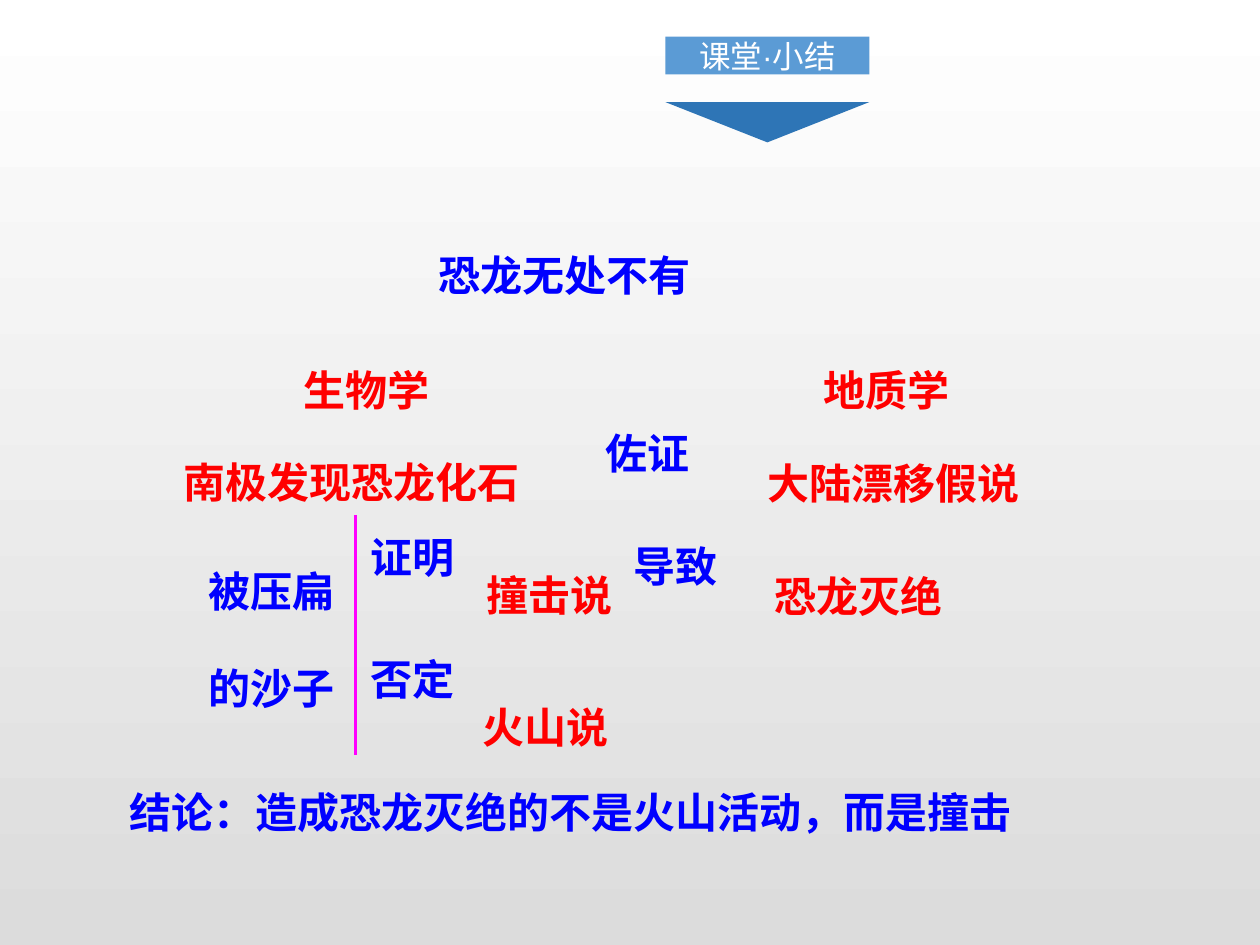
from dataclasses import dataclass

from lxml import etree
from pptx import Presentation
from pptx import util as u
from pptx.dml.color import RGBColor
from pptx.enum import shapes, text
from pptx.oxml.ns import qn


@dataclass(frozen=True)
class Theme:
    sky: str = "FFFFFF"
    ground: str = "DCDCDC"
    link: str = "0000FF"
    key: str = "FF0000"
    divider: str = "FF00FF"
    banner: str = "5B9BD5"
    pointer: str = "2E75B6"
    banner_text: str = "FFFFFF"
    body_font: str = "Times New Roman"
    banner_font: str = "Arial"
    body_size: int = 24
    banner_size: int = 18


def rgb(value):
    return RGBColor.from_string(value)


def write(frame, content, *, font, size, color, bold=False, align=None,
          line_spacing=None, before=None):
    """Put each line of content in its own formatted paragraph."""
    for index, line in enumerate(content.split("\n")):
        paragraph = frame.paragraphs[0] if index == 0 else frame.add_paragraph()
        paragraph.alignment = align
        paragraph.line_spacing = line_spacing
        paragraph.space_before = before
        run = paragraph.add_run()
        run.text = line
        run.font.name = font
        run.font.size = u.Pt(size)
        run.font.bold = bold
        run.font.color.rgb = rgb(color)


class SummarySlide:
    def __init__(self, deck, theme):
        self.theme = theme
        self.slide = deck.slides.add_slide(deck.slide_layouts[5])

    def background(self):
        fill = self.slide.background.fill
        fill.gradient()
        fill.gradient_angle = 270
        for stop, color in zip(fill.gradient_stops,
                               (self.theme.sky, self.theme.ground)):
            stop.color.rgb = rgb(color)

    def banner(self, content, left, top, width, height):
        heading = self.slide.shapes.title
        heading.left, heading.top = u.Inches(left), u.Inches(top)
        heading.width, heading.height = u.Inches(width), u.Inches(height)
        heading.fill.solid()
        heading.fill.fore_color.rgb = rgb(self.theme.banner)
        frame = heading.text_frame
        frame.margin_left = frame.margin_right = 0
        frame.margin_top = frame.margin_bottom = 0
        frame.vertical_anchor = text.MSO_ANCHOR.MIDDLE
        frame.auto_size = text.MSO_AUTO_SIZE.NONE
        write(frame, content, font=self.theme.banner_font,
              size=self.theme.banner_size, color=self.theme.banner_text,
              align=text.PP_ALIGN.CENTER)

    def pointer(self, left, top, width, height):
        triangle = self.slide.shapes.add_shape(
            shapes.MSO_SHAPE.ISOSCELES_TRIANGLE, u.Inches(left),
            u.Inches(top), u.Inches(width), u.Inches(height))
        triangle.rotation = 180
        triangle.shadow.inherit = False
        triangle.fill.solid()
        triangle.fill.fore_color.rgb = rgb(self.theme.pointer)
        triangle.line.fill.background()

    def label(self, content, left, top, width, color, height=0.71, wrap=True):
        box = self.slide.shapes.add_textbox(
            u.Inches(left), u.Inches(top), u.Inches(width), u.Inches(height))
        frame = box.text_frame
        frame.word_wrap = wrap
        frame.auto_size = text.MSO_AUTO_SIZE.SHAPE_TO_FIT_TEXT
        write(frame, content, font=self.theme.body_font,
              size=self.theme.body_size, color=color, bold=True,
              line_spacing=1.5, before=u.Pt(self.theme.body_size / 2))

    def divider(self, x, top, bottom):
        rule = self.slide.shapes.add_connector(
            shapes.MSO_CONNECTOR.STRAIGHT, u.Inches(x), u.Inches(top),
            u.Inches(x), u.Inches(bottom))
        rule.line.color.rgb = rgb(self.theme.divider)
        rule.line.width = u.Pt(1.5)
        etree.SubElement(rule._element.spPr, qn("a:effectLst"))


def main():
    deck = Presentation()
    deck.slide_width, deck.slide_height = u.Inches(10), u.Inches(7.5)
    theme = Theme()
    summary = SummarySlide(deck, theme)
    summary.background()

    # Heading with its downward pointer
    summary.banner("课堂·小结", 5.28, 0.29, 1.62, 0.3)
    summary.pointer(5.28, 0.81, 1.62, 0.32)

    # Key terms of both lines of evidence
    key_terms = [
        ("生物学", 2.31, 2.64, 1.46),
        ("地质学", 6.44, 2.64, 1.51),
        ("南极发现恐龙化石", 1.36, 3.37, 3.08),
        ("大陆漂移假说", 5.99, 3.38, 2.43),
        ("撞击说", 3.76, 4.27, 1.35),
        ("恐龙灭绝", 6.05, 4.28, 1.96),
        ("火山说", 3.73, 5.32, 1.4),
    ]
    for term in key_terms:
        summary.label(*term, color=theme.key)

    # Topic, linking words and conclusion
    statements = [
        ("恐龙无处不有", 3.38, 1.73, 2.58),
        ("证明", 2.84, 3.97, 1.13),
        ("否定", 2.84, 4.94, 1.15),
        ("结论：造成恐龙灭绝的不是火山活动，而是撞击", 0.93, 5.99, 7.77),
    ]
    for statement in statements:
        summary.label(*statement, color=theme.link)
    for relation in [("佐证", 4.71, 3.14, 0.87), ("导致", 4.93, 4.04, 0.87)]:
        summary.label(*relation, color=theme.link, wrap=False)

    # Sand evidence beside the divider
    summary.label("被压扁\n的沙子", 1.56, 4.24, 1.25, theme.link, height=1.51)
    summary.divider(2.82, 4.09, 5.99)

    deck.save("out.pptx")


if __name__ == "__main__":
    main()
